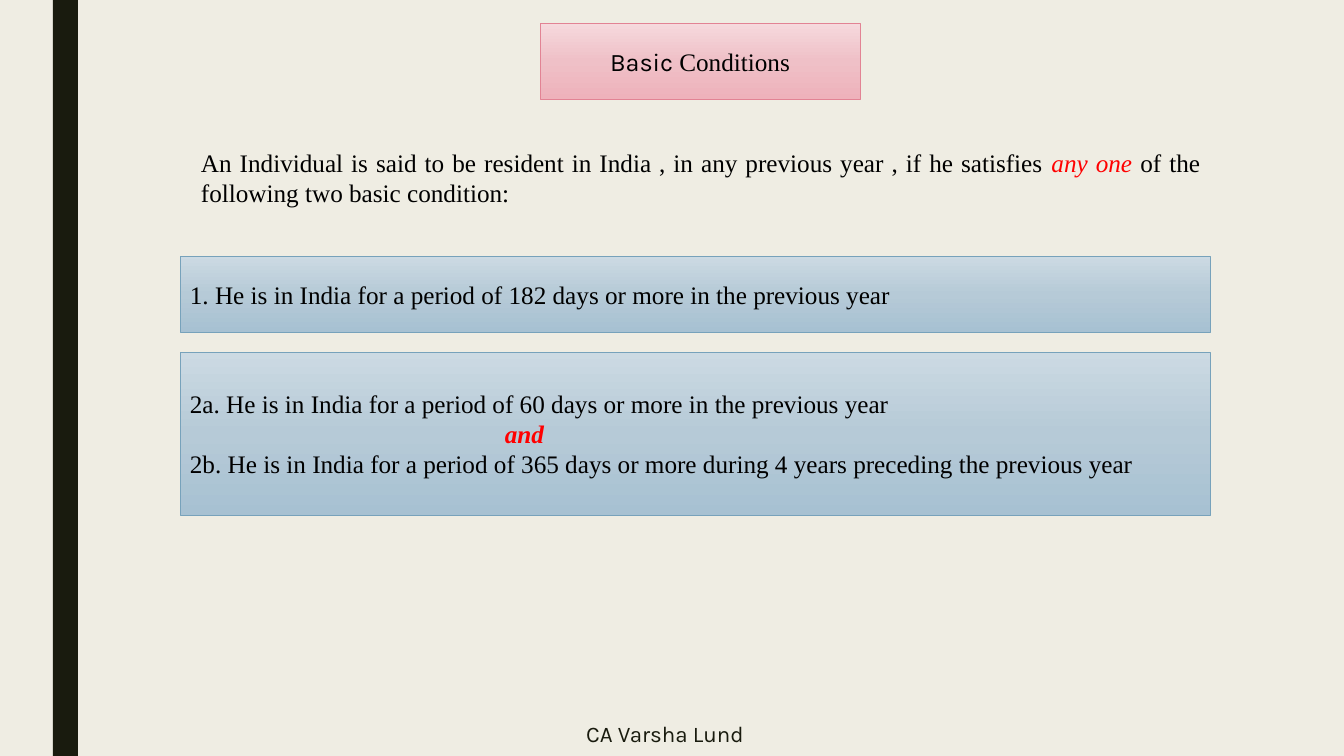
from copy import deepcopy
from dataclasses import dataclass

from pptx import Presentation
from pptx.dml.color import RGBColor as Rgb
from pptx.enum.shapes import MSO_SHAPE as Shape
from pptx.enum.text import MSO_ANCHOR as Anchor, PP_ALIGN as Align
from pptx.oxml.ns import qn
from pptx.util import Pt

EMU_PER_PX = 12192000 / 1344
SLIDE_W, SLIDE_H = 1344, 756


@dataclass(frozen=True)
class Theme:
    background: str = "EFEDE3"
    dark: str = "191B0E"
    text: str = "000000"
    accent: str = "FF0000"
    pink: tuple = ("F6D9DD", "EFC0C7", "EEB2BB")
    pink_line: str = "E28394"
    blue: tuple = ("CCDAE3", "B6CAD7", "A7C1D2")
    blue_line: str = "77A2BB"
    serif: str = "Times New Roman"
    sans: str = "Karla"
    body_size: int = 18
    footer_size: int = 16


THEME = Theme()


def px(length):
    return round(length * EMU_PER_PX)


def box(*lengths):
    return [px(length) for length in lengths]


def add_run(paragraph, text, font=THEME.serif, size=THEME.body_size,
            color=THEME.text, bold=False, italic=False):
    run = paragraph.add_run()
    run.text = text
    run.font.name, run.font.size = font, Pt(size)
    run.font.bold, run.font.italic = bold, italic
    run.font.color.rgb = Rgb.from_string(color)


def write(frame, *lines, align=Align.JUSTIFY, anchor=Anchor.MIDDLE):
    """Each line is a list of (text, format) runs."""
    frame.word_wrap = True
    frame.vertical_anchor = anchor
    for index, line in enumerate(lines):
        paragraph = frame.add_paragraph() if index else frame.paragraphs[0]
        paragraph.alignment = align
        for text, look in line:
            add_run(paragraph, text, **look)


def add_panel(slide, place, colors, line_color):
    panel = slide.shapes.add_shape(Shape.RECTANGLE, *box(*place))
    panel.shadow.inherit = False
    panel.line.color.rgb = Rgb.from_string(line_color)
    panel.line.width = Pt(0.5)
    panel.fill.gradient()
    panel.fill.gradient_angle = 270
    # A new gradient has two stops; the panel needs a middle one
    stops = panel.element.spPr.find(qn("a:gradFill")).find(qn("a:gsLst"))
    stops.append(deepcopy(stops[0]))
    for index, (stop, color) in enumerate(zip(panel.fill.gradient_stops, colors)):
        stop.position = index / 2
        stop.color.rgb = Rgb.from_string(color)
    return panel.text_frame


def add_stripe(slide, place, color):
    stripe = slide.shapes.add_shape(Shape.RECTANGLE, *box(*place))
    stripe.shadow.inherit = False
    stripe.fill.solid()
    stripe.fill.fore_color.rgb = Rgb.from_string(color)
    stripe.line.fill.background()


def add_label(slide, place):
    return slide.shapes.add_textbox(*box(*place)).text_frame


def main():
    deck = Presentation()
    deck.slide_width, deck.slide_height = box(SLIDE_W, SLIDE_H)
    slide = deck.slides.add_slide(deck.slide_layouts[6])

    # Background and side stripe
    slide.background.fill.solid()
    slide.background.fill.fore_color.rgb = Rgb.from_string(THEME.background)
    add_stripe(slide, (53, 0, 25, SLIDE_H), THEME.dark)

    # Title
    title = add_panel(slide, (540, 23, 320, 76), THEME.pink, THEME.pink_line)
    write(title, [("Basic ", {"font": THEME.sans}), ("Conditions", {})],
          align=Align.CENTER)

    # Introduction
    intro = add_label(slide, (191, 142, 1019, 72))
    write(intro, [
        ("An Individual is said to be resident in India , in any previous year ,"
         " if he satisfies ", {}),
        ("any one ", {"color": THEME.accent, "italic": True}),
        ("of the following two basic condition:", {}),
    ], anchor=Anchor.TOP)

    # Conditions
    first = add_panel(slide, (180, 256, 1030, 76), THEME.blue, THEME.blue_line)
    write(first, [("1. He is in India for a period of 182 days or more in the"
                   " previous year", {})])

    second = add_panel(slide, (180, 352, 1030, 163), THEME.blue, THEME.blue_line)
    write(second,
          [("2a. He is in India for a period of 60 days or more in the"
            " previous year", {})],
          [("and", {"color": THEME.accent, "bold": True, "italic": True})],
          [("2b. He is in India for a period of 365 days or more during 4 years"
            " preceding the previous year", {})])
    # Indent the joining word
    joining_word = second.paragraphs[1]
    joining_word._p.get_or_add_pPr().set("marL", str(px(315)))

    # Footer
    footer = add_label(slide, (319, 712, 692, 44))
    write(footer, [("CA Varsha Lund", {"font": THEME.sans, "color": THEME.dark,
                                       "size": THEME.footer_size})],
          align=Align.CENTER)

    deck.save("out.pptx")


if __name__ == "__main__":
    main()
